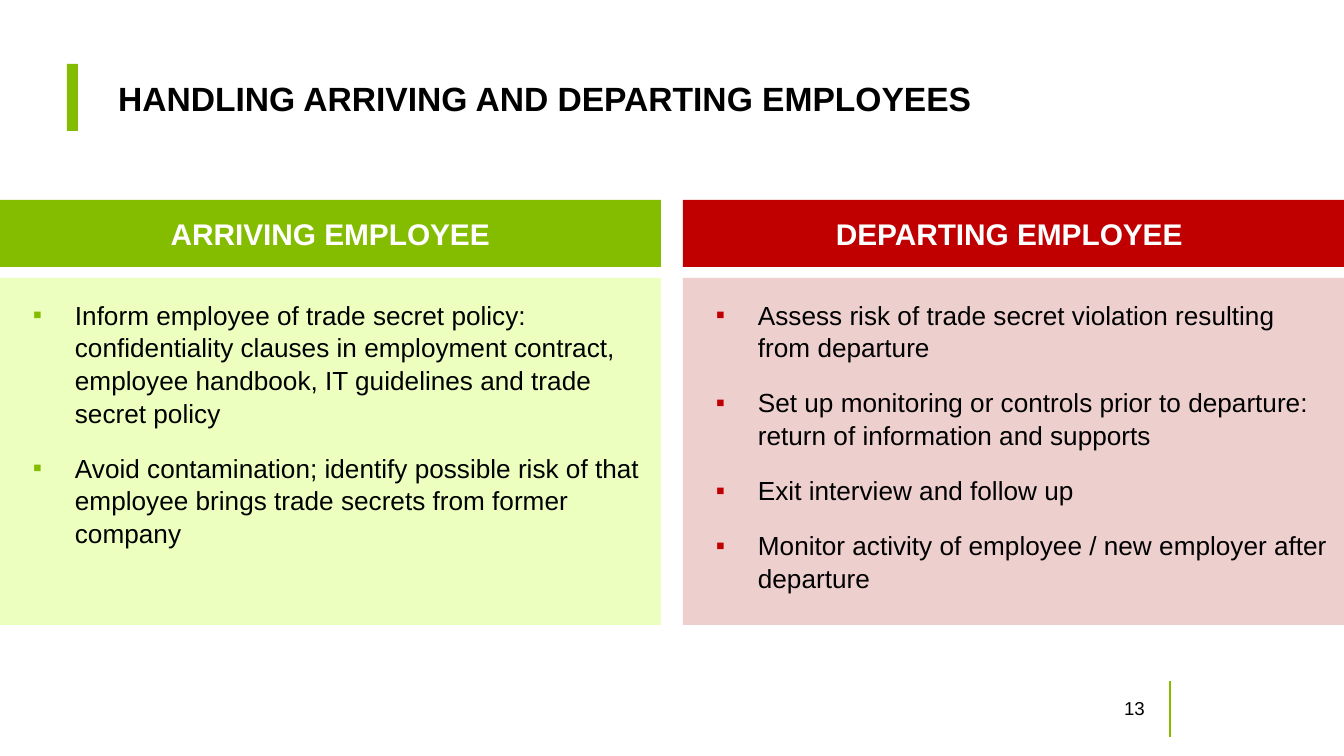
import pptx
import pptx.dml.color
import pptx.enum.shapes
import pptx.enum.text
import pptx.oxml.ns
import pptx.util
from lxml import etree

RGB = pptx.dml.color.RGBColor
GREEN = RGB(0x84, 0xBD, 0x00)
RED = RGB(0xC0, 0x00, 0x00)
PALE_GREEN = RGB(0xEC, 0xFF, 0xBF)
PALE_RED = RGB(0xED, 0xCF, 0xCE)
BLACK = RGB(0, 0, 0)
WHITE = RGB(0xFF, 0xFF, 0xFF)

ALIGN = pptx.enum.text.PP_ALIGN
ANCHOR = pptx.enum.text.MSO_ANCHOR
qn = pptx.oxml.ns.qn
SLIDE_W, SLIDE_H = 1344, 756
PX = 9144000 / SLIDE_W


def emu(px):
    return pptx.util.Emu(round(px * PX))


def write(p, text, size=14, color=BLACK, bold=False, align=ALIGN.LEFT,
          spacing=None, before=0, bullet=None):
    """Fill one paragraph; a newline in the text is a line break."""
    p.alignment = align
    p.space_before = pptx.util.Pt(before)
    if spacing:
        p.line_spacing = spacing
    if bullet is not None:
        pPr = p._p.get_or_add_pPr()
        pPr.set("marL", str(emu(48)))
        pPr.set("indent", str(emu(-42)))
        clr = etree.SubElement(pPr, qn("a:buClr"))
        etree.SubElement(clr, qn("a:srgbClr"), val=str(bullet))
        etree.SubElement(pPr, qn("a:buFont"), typeface="Arial")
        etree.SubElement(pPr, qn("a:buChar"), char="▪")
    for i, line in enumerate(text.split("\n")):
        if i:
            p.add_line_break()
            etree.SubElement(p._p[-1], qn("a:rPr"), sz=str(size * 100))
        r = p.add_run()
        r.text = line
        r.font.name = "Arial"
        r.font.size = pptx.util.Pt(size)
        r.font.bold = bold
        r.font.color.rgb = color


class Deck:
    def __init__(self):
        self.prs = pptx.Presentation()
        self.prs.slide_width = emu(SLIDE_W)
        self.prs.slide_height = emu(SLIDE_H)
        self.s = self.prs.slides.add_slide(self.prs.slide_layouts[6])

    def rect(self, x, y, w, h, fill):
        sp = self.s.shapes.add_shape(
            pptx.enum.shapes.MSO_SHAPE.RECTANGLE, *map(emu, (x, y, w, h)))
        sp.shadow.inherit = False
        sp.fill.solid()
        sp.fill.fore_color.rgb = fill
        sp.line.fill.background()
        return sp

    def line(self, x1, y1, x2, y2, color, width):
        c = self.s.shapes.add_connector(
            pptx.enum.shapes.MSO_CONNECTOR.STRAIGHT, *map(emu, (x1, y1, x2, y2)))
        c.line.color.rgb = color
        c.line.width = pptx.util.Pt(width)
        etree.SubElement(c._element.spPr, qn("a:effectLst"))

    def label(self, x, y, w, h, text, **style):
        sp = self.s.shapes.add_textbox(*map(emu, (x, y, w, h)))
        tf = sp.text_frame
        tf.word_wrap = True
        tf.vertical_anchor = ANCHOR.MIDDLE
        write(tf.paragraphs[0], text, **style)

    def header(self, x, y, w, h, text, fill):
        tf = self.rect(x, y, w, h, fill).text_frame
        tf.vertical_anchor = ANCHOR.MIDDLE
        write(tf.paragraphs[0], text, size=16, color=WHITE, bold=True,
              align=ALIGN.CENTER)

    def bullets(self, x, y, w, h, items, fill, accent):
        tf = self.rect(x, y, w, h, fill).text_frame
        tf.word_wrap = True
        tf.vertical_anchor = ANCHOR.TOP
        tf.margin_left, tf.margin_top = emu(27), emu(20)
        tf.margin_right = tf.margin_bottom = emu(13)
        for i, item in enumerate(items):
            p = tf.add_paragraph() if i else tf.paragraphs[0]
            write(p, item, spacing=1.04, before=12 if i else 0, bullet=accent)


COLUMNS = [
    ("ARRIVING EMPLOYEE", GREEN, PALE_GREEN, [
        "Inform employee of trade secret policy: confidentiality clauses in "
        "employment contract, employee handbook, IT guidelines and trade "
        "secret policy",
        "Avoid contamination; identify possible risk of that employee brings "
        "trade secrets from former company",
    ]),
    ("DEPARTING EMPLOYEE ", RED, PALE_RED, [
        "Assess risk of trade secret violation resulting \nfrom departure",
        "Set up monitoring or controls prior to departure: return of "
        "information and supports",
        "Exit interview and follow up",
        "Monitor activity of employee / new employer after departure",
    ]),
]


def main():
    deck = Deck()

    # Title with its accent bar
    deck.rect(67, 64, 11, 67, GREEN)
    deck.label(105, 55, 1090, 91, "HANDLING ARRIVING AND DEPARTING EMPLOYEES",
               size=18, bold=True, spacing=0.9)

    # Two columns, flush with the slide's sides
    col_w = 661
    for i, (heading, accent, pale, items) in enumerate(COLUMNS):
        x = i * (SLIDE_W - col_w)
        deck.header(x, 200, col_w, 67, heading, accent)
        deck.bullets(x, 278, col_w, 347, items, pale, accent)

    # Page number and footer rule
    deck.line(1170, 681, 1170, 737, GREEN, 1.5)
    deck.label(1068, 688, 90, 41, "13", size=10, align=ALIGN.RIGHT)

    deck.prs.save("out.pptx")


if __name__ == "__main__":
    main()
